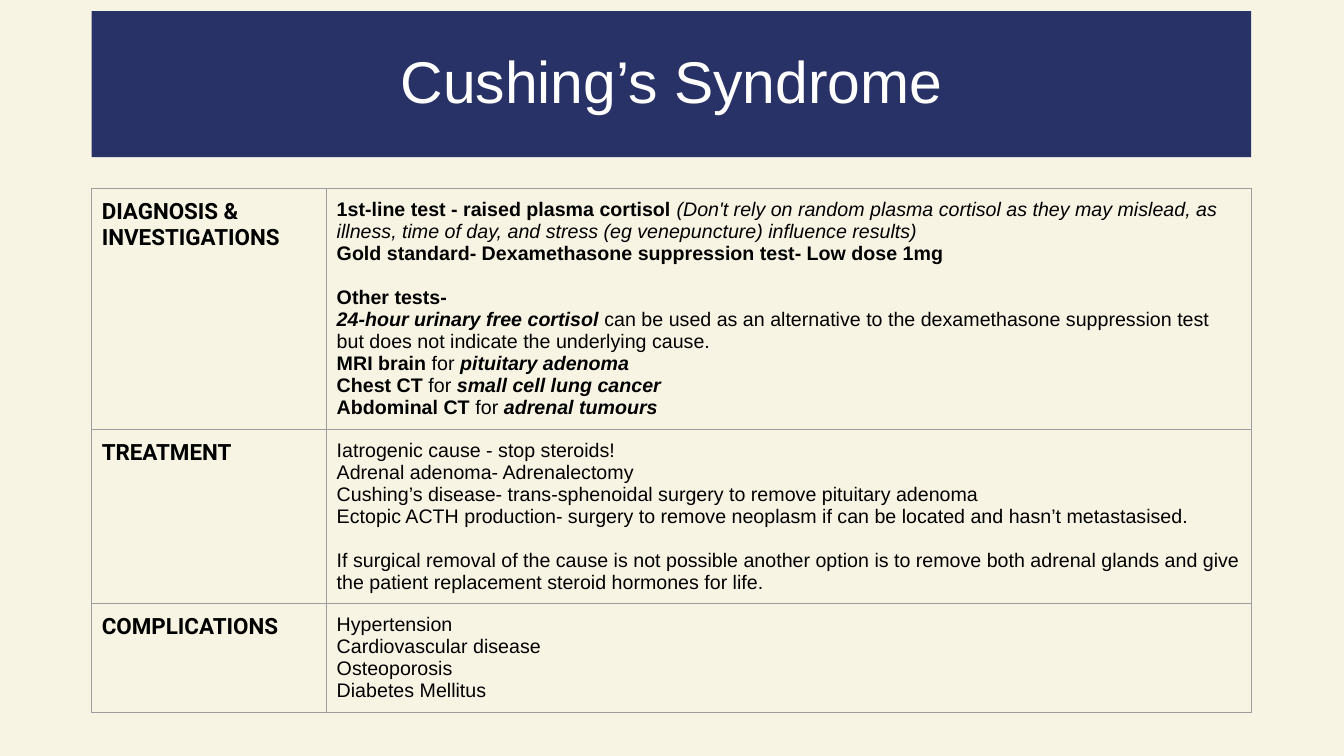
from dataclasses import dataclass

from lxml.etree import SubElement
from pptx import Presentation
from pptx.dml.color import RGBColor
from pptx.enum.text import MSO_ANCHOR, MSO_AUTO_SIZE, PP_ALIGN
from pptx.oxml.ns import qn
from pptx.util import Inches, Pt

COLOURS = {"page": "F8F4E4", "banner": "293267", "title": "FFFFFF",
           "text": "000000", "border": "9E9E9E"}
LEFT, WIDTH = 0.91, 11.5
COLUMN_WIDTHS = (2.33, 9.17)
GAP = 15.7  # points, one line of body text


@dataclass
class Run:
    text: str
    bold: bool = False
    italic: bool = False


@dataclass
class Line:
    runs: list[Run]
    space_before: float = 0


@dataclass
class Section:
    heading: str
    height: float
    lines: list[Line]


def plain(text: str, space_before: float = 0) -> Line:
    return Line([Run(text)], space_before)


def scan(test: str, finding: str) -> Line:
    """Name an imaging test and what it looks for."""
    return Line([Run(test, bold=True), Run(" for "), Run(finding, bold=True, italic=True)])


SECTIONS = [
    Section("DIAGNOSIS & INVESTIGATIONS", 2.39, [
        Line([Run("1st-line test - raised plasma cortisol ", bold=True),
              Run("(Don't rely on random plasma cortisol as they may mislead, as illness, "
                  "time of day, and stress (eg venepuncture) influence results)", italic=True)]),
        Line([Run("Gold standard- Dexamethasone suppression test- Low dose 1mg", bold=True)]),
        Line([Run("Other tests-", bold=True)], GAP),
        Line([Run("24-hour urinary free cortisol", bold=True, italic=True),
              Run(" can be used as an alternative to the dexamethasone suppression test "
                  "but does not indicate the underlying cause.")]),
        scan("MRI brain", "pituitary adenoma"),
        scan("Chest CT", "small cell lung cancer"),
        scan("Abdominal CT", "adrenal tumours"),
    ]),
    Section("TREATMENT", 1.73, [
        plain("Iatrogenic cause - stop steroids!"),
        plain("Adrenal adenoma- Adrenalectomy"),
        plain("Cushing’s disease- trans-sphenoidal surgery to remove pituitary adenoma"),
        plain("Ectopic ACTH production- surgery to remove neoplasm if can be located "
              "and hasn’t metastasised."),
        plain("If surgical removal of the cause is not possible another option is to remove "
              "both adrenal glands and give the patient replacement steroid hormones for life.",
              GAP),
    ]),
    Section("COMPLICATIONS", 1.07, [
        plain("Hypertension"),
        plain("Cardiovascular disease"),
        plain("Osteoporosis"),
        plain("Diabetes Mellitus"),
    ]),
]


def colour(name: str) -> RGBColor:
    return RGBColor.from_string(COLOURS[name])


def add_run(para, run: Run, font: str, size: float, colour_name: str = "text") -> None:
    span = para.add_run()
    span.text = run.text
    span.font.name = font
    span.font.size = Pt(size)
    span.font.bold = run.bold
    span.font.italic = run.italic
    span.font.color.rgb = colour(colour_name)


def add_borders(cell) -> None:
    properties = cell._tc.get_or_add_tcPr()
    for side in ("lnL", "lnR", "lnT", "lnB"):
        border = SubElement(properties, qn(f"a:{side}"), w=str(Pt(0.75)))
        fill = SubElement(border, qn("a:solidFill"))
        SubElement(fill, qn("a:srgbClr"), val=COLOURS["border"])


def fill_cell(cell, lines: list[Line], font: str, size: float) -> None:
    cell.margin_left = cell.margin_right = Inches(0.1)
    cell.margin_top = cell.margin_bottom = Inches(0.1)
    add_borders(cell)
    cell.fill.background()
    frame = cell.text_frame
    for index, line in enumerate(lines):
        para = frame.add_paragraph() if index else frame.paragraphs[0]
        if line.space_before:
            para.space_before = Pt(line.space_before)
        for run in line.runs:
            add_run(para, run, font, size)


def add_title(page) -> None:
    title = page.shapes.title
    title.left, title.top = Inches(LEFT), Inches(0.11)
    title.width, title.height = Inches(WIDTH), Inches(1.45)
    title.fill.solid()
    title.fill.fore_color.rgb = colour("banner")
    frame = title.text_frame
    frame.auto_size = MSO_AUTO_SIZE.NONE
    frame.vertical_anchor = MSO_ANCHOR.MIDDLE
    para = frame.paragraphs[0]
    para.alignment = PP_ALIGN.CENTER
    para.line_spacing = 0.9
    add_run(para, Run("Cushing’s Syndrome"), "Arial", 42, "title")


def add_sections(page) -> None:
    height = sum(section.height for section in SECTIONS)
    table = page.shapes.add_table(len(SECTIONS), len(COLUMN_WIDTHS), Inches(LEFT),
                                  Inches(1.87), Inches(WIDTH), Inches(height)).table
    table.first_row = table.horz_banding = False
    for column, width in zip(table.columns, COLUMN_WIDTHS):
        column.width = Inches(width)
    for row, section in zip(table.rows, SECTIONS):
        row.height = Inches(section.height)
        heading, body = row.cells
        fill_cell(heading, [Line([Run(section.heading, bold=True)])], "Roboto", 16)
        fill_cell(body, section.lines, "Arial", 14)


def main() -> None:
    deck = Presentation()
    deck.slide_width, deck.slide_height = Inches(13.33), Inches(7.5)
    page = deck.slides.add_slide(deck.slide_layouts.get_by_name("Title Only"))
    page.background.fill.solid()
    page.background.fill.fore_color.rgb = colour("page")
    add_title(page)
    add_sections(page)
    deck.save("out.pptx")


if __name__ == "__main__":
    main()
